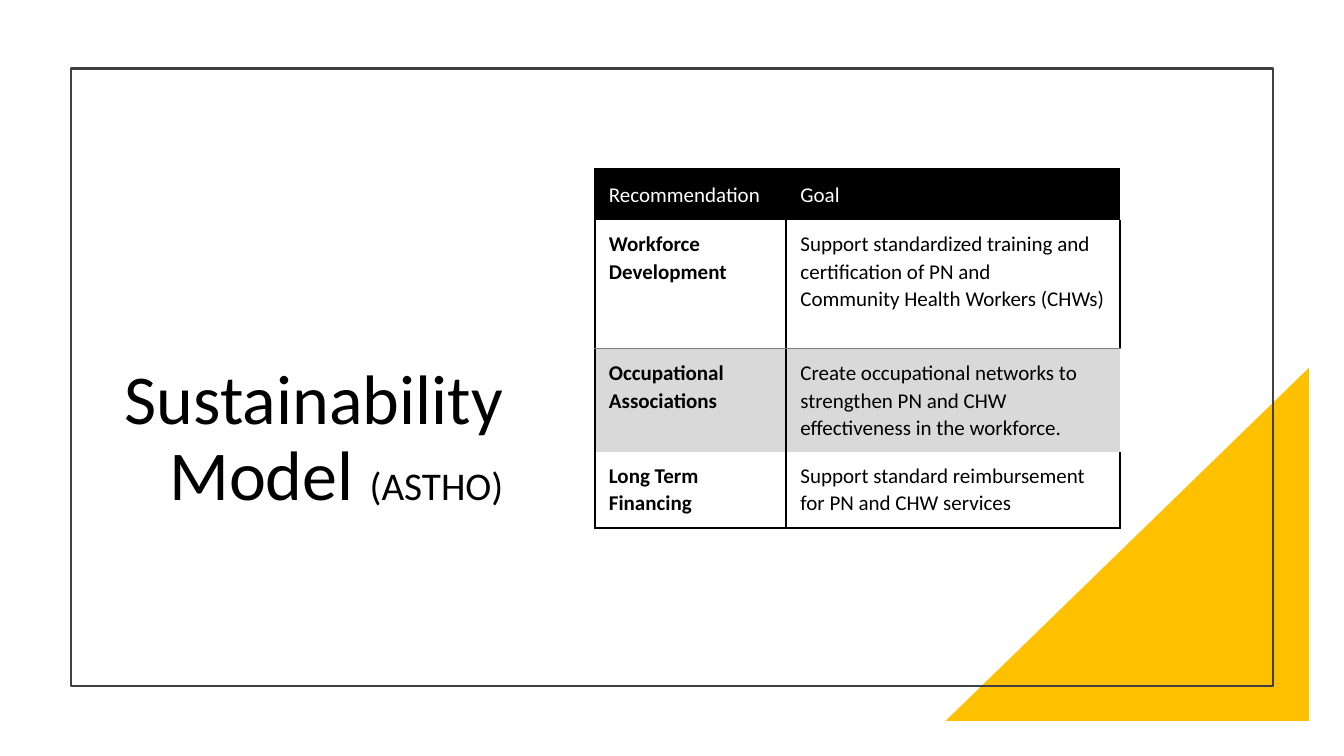
from typing import NamedTuple

from lxml import etree
from pptx import Presentation
from pptx import util as u
from pptx.dml.color import RGBColor
from pptx.enum import shapes, text
from pptx.oxml.ns import qn

COLOURS = {"ink": "000000", "paper": "FFFFFF", "accent": "FFC000",
           "frame": "404040", "band": "D9D9D9", "rule": "808080"}
FONT = "Calibri"
SLIDE_WIDTH, SLIDE_HEIGHT = u.Inches(13.33), u.Inches(7.5)
EDGES = {"l": "a:lnL", "r": "a:lnR", "t": "a:lnT", "b": "a:lnB"}


class Area(NamedTuple):
    """Left, top, width and height in percent of the slide."""
    left: float
    top: float
    width: float
    height: float


class Row(NamedTuple):
    height: float
    recommendation: str
    goal: str
    fill: str
    ink: str
    left_edges: dict[str, str]
    right_edges: dict[str, str]


CORNER = Area(70.37, 48.67, 27.01, 46.67)
FRAME = Area(5.25, 9.07, 89.5, 81.73)
TITLE = Area(7.95, 15.07, 30.23, 53.73)
TABLE = Area(44.26, 22.4, 39.08, 47.47)
COLUMN_SHARES = (14.25, 24.83)

SIDES = {"l": "ink", "r": "ink"}
ROWS = (
    Row(6.67, "Recommendation", "Goal", "ink", "paper",
        {"l": "ink", "t": "ink"}, {"t": "ink"}),
    Row(17.07, "Workforce Development",
        "Support standardized training and certification of PN and\n"
        "Community Health Workers (CHWs)", "paper", "ink",
        SIDES | {"b": "rule"}, SIDES | {"b": "rule"}),
    Row(13.6, "Occupational Associations",
        "Create occupational networks to strengthen PN and CHW\n"
        "effectiveness in the workforce.", "band", "ink",
        SIDES | {"t": "rule"}, {"l": "ink", "t": "rule"}),
    Row(10.13, "Long Term Financing",
        "Support standard reimbursement for PN and CHW services", "paper", "ink",
        SIDES | {"b": "ink"}, SIDES | {"b": "ink"}),
)


def colour(name: str) -> RGBColor:
    return RGBColor.from_string(COLOURS[name])


def across(share: float) -> int:
    return round(SLIDE_WIDTH * share / 100)


def down(share: float) -> int:
    return round(SLIDE_HEIGHT * share / 100)


def place(area: Area) -> tuple[int, int, int, int]:
    return across(area.left), down(area.top), across(area.width), down(area.height)


def style_run(run, size: float, ink: str, bold: bool = False) -> None:
    run.font.name, run.font.size, run.font.bold = FONT, u.Pt(size), bold
    run.font.color.rgb = colour(ink)


def draw_backdrop(slide) -> None:
    corner = slide.shapes.add_shape(shapes.MSO_SHAPE.RIGHT_TRIANGLE, *place(CORNER))
    corner.shadow.inherit = False
    corner.fill.solid()
    corner.fill.fore_color.rgb = colour("accent")
    corner.line.fill.background()
    corner._element.spPr.find(qn("a:xfrm")).set("flipH", "1")

    frame = slide.shapes.add_shape(shapes.MSO_SHAPE.RECTANGLE, *place(FRAME))
    frame.shadow.inherit = False
    frame.fill.background()
    frame.line.color.rgb = colour("frame")
    frame.line.width = u.Pt(1.5)


def draw_title(slide) -> None:
    frame = slide.shapes.add_textbox(*place(TITLE)).text_frame
    frame.word_wrap = True
    frame.vertical_anchor = text.MSO_ANCHOR.BOTTOM
    heading = frame.paragraphs[0]
    heading.alignment = text.PP_ALIGN.RIGHT
    heading.line_spacing = 0.9
    for words, size in (("Sustainability Model ", 50), ("(ASTHO)", 28)):
        run = heading.add_run()
        run.text = words
        style_run(run, size, "ink")


def set_edges(cell, edges: dict[str, str]) -> None:
    """Draw the given edges and clear the others."""
    properties = cell._tc.get_or_add_tcPr()
    for position, (side, tag) in enumerate(EDGES.items()):
        edge = etree.Element(qn(tag))
        properties.insert(position, edge)
        if side not in edges:
            etree.SubElement(edge, qn("a:noFill"))
            continue
        edge.set("w", str(u.Pt(0.5 if edges[side] == "rule" else 1.5)))
        fill = etree.SubElement(edge, qn("a:solidFill"))
        etree.SubElement(fill, qn("a:srgbClr"), val=COLOURS[edges[side]])


def fill_cell(cell, words: str, row: Row, edges: dict[str, str],
              bold: bool, centred: bool) -> None:
    cell.margin_left, cell.margin_right = u.Inches(0.14), u.Inches(0.08)
    cell.margin_top = cell.margin_bottom = u.Inches(0.1)
    cell.vertical_anchor = text.MSO_ANCHOR.MIDDLE if centred else text.MSO_ANCHOR.TOP
    cell.fill.solid()
    cell.fill.fore_color.rgb = colour(row.fill)
    cell.text_frame.text = words
    for paragraph in cell.text_frame.paragraphs:
        paragraph.line_spacing = 1.07
        for run in paragraph.runs:
            style_run(run, 15, row.ink, bold)
    set_edges(cell, edges)


def draw_recommendations(slide) -> None:
    table = slide.shapes.add_table(len(ROWS), len(COLUMN_SHARES), *place(TABLE)).table
    table.first_row = table.horz_banding = False
    for column, share in zip(table.columns, COLUMN_SHARES):
        column.width = across(share)
    for index, row in enumerate(ROWS):
        header = index == 0
        table.rows[index].height = down(row.height)
        fill_cell(table.cell(index, 0), row.recommendation, row, row.left_edges,
                  bold=not header, centred=header)
        fill_cell(table.cell(index, 1), row.goal, row, row.right_edges,
                  bold=False, centred=header)


def main() -> None:
    deck = Presentation()
    deck.slide_width, deck.slide_height = SLIDE_WIDTH, SLIDE_HEIGHT
    slide = deck.slides.add_slide(deck.slide_layouts[6])
    draw_backdrop(slide)
    draw_title(slide)
    draw_recommendations(slide)
    deck.save("out.pptx")


if __name__ == "__main__":
    main()
